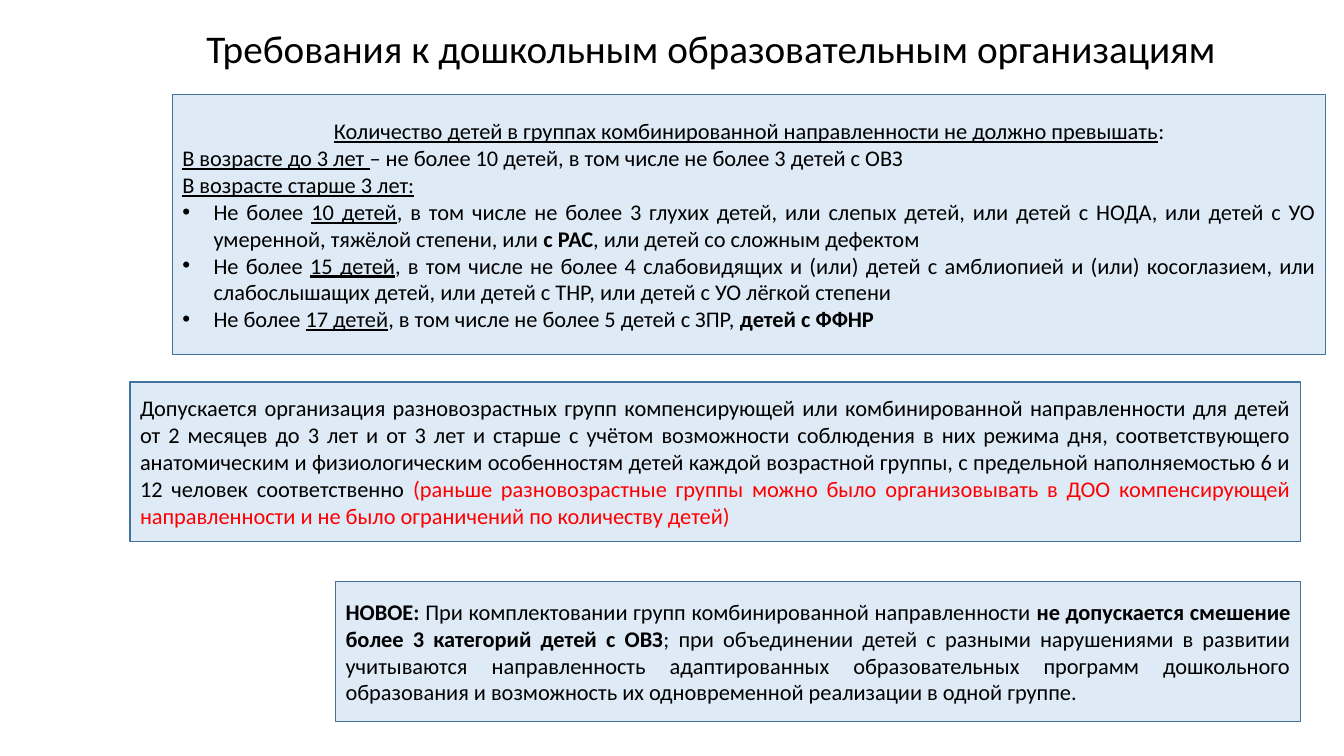
import lxml.etree
import pptx
import pptx.dml.color
import pptx.enum.shapes
import pptx.enum.text
import pptx.oxml.ns
import pptx.util

Inches = pptx.util.Inches
Pt = pptx.util.Pt
RGBColor = pptx.dml.color.RGBColor
PP_ALIGN = pptx.enum.text.PP_ALIGN
MIDDLE = pptx.enum.text.MSO_ANCHOR.MIDDLE

BLACK = RGBColor(0x00, 0x00, 0x00)
RED = RGBColor(0xFF, 0x00, 0x00)
PALE_BLUE = RGBColor(0xDE, 0xEB, 0xF7)
BORDER_BLUE = RGBColor(0x43, 0x73, 0x9E)
FONT = "Calibri"
BULLET_INDENT = Inches(0.31)

PLAIN, UNDERLINED, BOLD, CHANGED = "plain", "underlined", "bold", "changed"

GROUP_HEADING = [
    ("Количество детей в группах комбинированной направленности не должно превышать", UNDERLINED),
    (":", PLAIN),
]
AGE_LINES = [
    [
        ("В возрасте до 3 лет ", UNDERLINED),
        ("– не более 10 детей, в том числе не более 3 детей с ОВЗ", PLAIN),
    ],
    [("В возрасте старше 3 лет:", UNDERLINED)],
]
GROUP_LIMITS = [
    [
        ("Не более ", PLAIN),
        ("10 детей", UNDERLINED),
        (", в том числе не более 3 глухих детей, или слепых детей, или детей с НОДА, "
         "или детей с УО умеренной, тяжёлой степени, или ", PLAIN),
        ("с РАС", BOLD),
        (", или детей со сложным дефектом", PLAIN),
    ],
    [
        ("Не более ", PLAIN),
        ("15 детей", UNDERLINED),
        (", в том числе не более 4 слабовидящих и (или) детей с амблиопией и (или) косоглазием, "
         "или слабослышащих детей, или детей с ТНР, или детей с УО лёгкой степени", PLAIN),
    ],
    [
        ("Не более ", PLAIN),
        ("17 детей", UNDERLINED),
        (", в том числе не более 5 детей с ЗПР, ", PLAIN),
        ("детей с ФФНР", BOLD),
    ],
]
MIXED_AGE_RULE = [
    ("Допускается организация разновозрастных групп компенсирующей или комбинированной "
     "направленности для детей от 2 месяцев до 3 лет и от 3 лет и старше с учётом возможности "
     "соблюдения в них режима дня, соответствующего анатомическим и физиологическим особенностям "
     "детей каждой возрастной группы, с предельной наполняемостью 6 и 12 человек соответственно ", PLAIN),
    ("(раньше разновозрастные группы можно было организовывать в ДОО компенсирующей направленности "
     "и не было ограничений по количеству детей)", CHANGED),
]
NEW_RULE = [
    ("НОВОЕ: ", BOLD),
    ("При комплектовании групп комбинированной направленности ", PLAIN),
    ("не допускается смешение более 3 категорий детей с ОВЗ", BOLD),
    ("; при объединении детей с разными нарушениями в развитии учитываются направленность "
     "адаптированных образовательных программ дошкольного образования и возможность их "
     "одновременной реализации в одной группе.", PLAIN),
]


def add_run(p, text, size, style=PLAIN):
    r = p.add_run()
    r.text = text
    r.font.name = FONT
    r.font.size = Pt(size)
    r.font.bold = style == BOLD
    r.font.underline = style == UNDERLINED
    r.font.color.rgb = RED if style == CHANGED else BLACK


def set_bullet(p):
    pPr = p._p.get_or_add_pPr()
    pPr.set("marL", str(BULLET_INDENT))
    pPr.set("indent", str(-BULLET_INDENT))
    font = lxml.etree.SubElement(pPr, pptx.oxml.ns.qn("a:buFont"))
    font.set("typeface", "Arial")
    char = lxml.etree.SubElement(pPr, pptx.oxml.ns.qn("a:buChar"))
    char.set("char", "•")


def add_title(slide, left, top, width, height):
    sp = slide.shapes.add_textbox(left, top, width, height)
    tf = sp.text_frame
    tf.word_wrap = True
    tf.vertical_anchor = MIDDLE
    p = tf.paragraphs[0]
    p.line_spacing = 0.9
    add_run(p, "Требования к дошкольным образовательным организациям", 28)


def add_panel(slide, left, top, width, height, lines, heading=None, bullets=()):
    sp = slide.shapes.add_shape(
        pptx.enum.shapes.MSO_SHAPE.RECTANGLE, left, top, width, height)
    sp.shadow.inherit = False
    sp.fill.solid()
    sp.fill.fore_color.rgb = PALE_BLUE
    sp.line.color.rgb = BORDER_BLUE
    sp.line.width = Pt(1)
    tf = sp.text_frame
    tf.word_wrap = True
    tf.vertical_anchor = MIDDLE

    rows = [(heading, PP_ALIGN.CENTER, False)] if heading else []
    rows += [(line, PP_ALIGN.JUSTIFY, False) for line in lines]
    rows += [(line, PP_ALIGN.JUSTIFY, True) for line in bullets]
    for i, (runs, align, bulleted) in enumerate(rows):
        p = tf.paragraphs[0] if i == 0 else tf.add_paragraph()
        p.alignment = align
        if bulleted:
            set_bullet(p)
        for text, style in runs:
            add_run(p, text, 16, style)


def main():
    prs = pptx.Presentation()
    prs.slide_width = Inches(13.33)
    prs.slide_height = Inches(7.5)
    slide = prs.slides.add_slide(prs.slide_layouts[6])
    add_title(slide, Inches(1.95), Inches(0.22), Inches(10.96), Inches(0.56))
    add_panel(slide, Inches(1.71), Inches(0.94), Inches(11.44), Inches(2.58),
              AGE_LINES, heading=GROUP_HEADING, bullets=GROUP_LIMITS)
    add_panel(slide, Inches(1.29), Inches(3.79), Inches(11.61), Inches(1.58), [MIXED_AGE_RULE])
    add_panel(slide, Inches(3.33), Inches(5.77), Inches(9.57), Inches(1.39), [NEW_RULE])
    prs.save("out.pptx")


if __name__ == "__main__":
    main()
